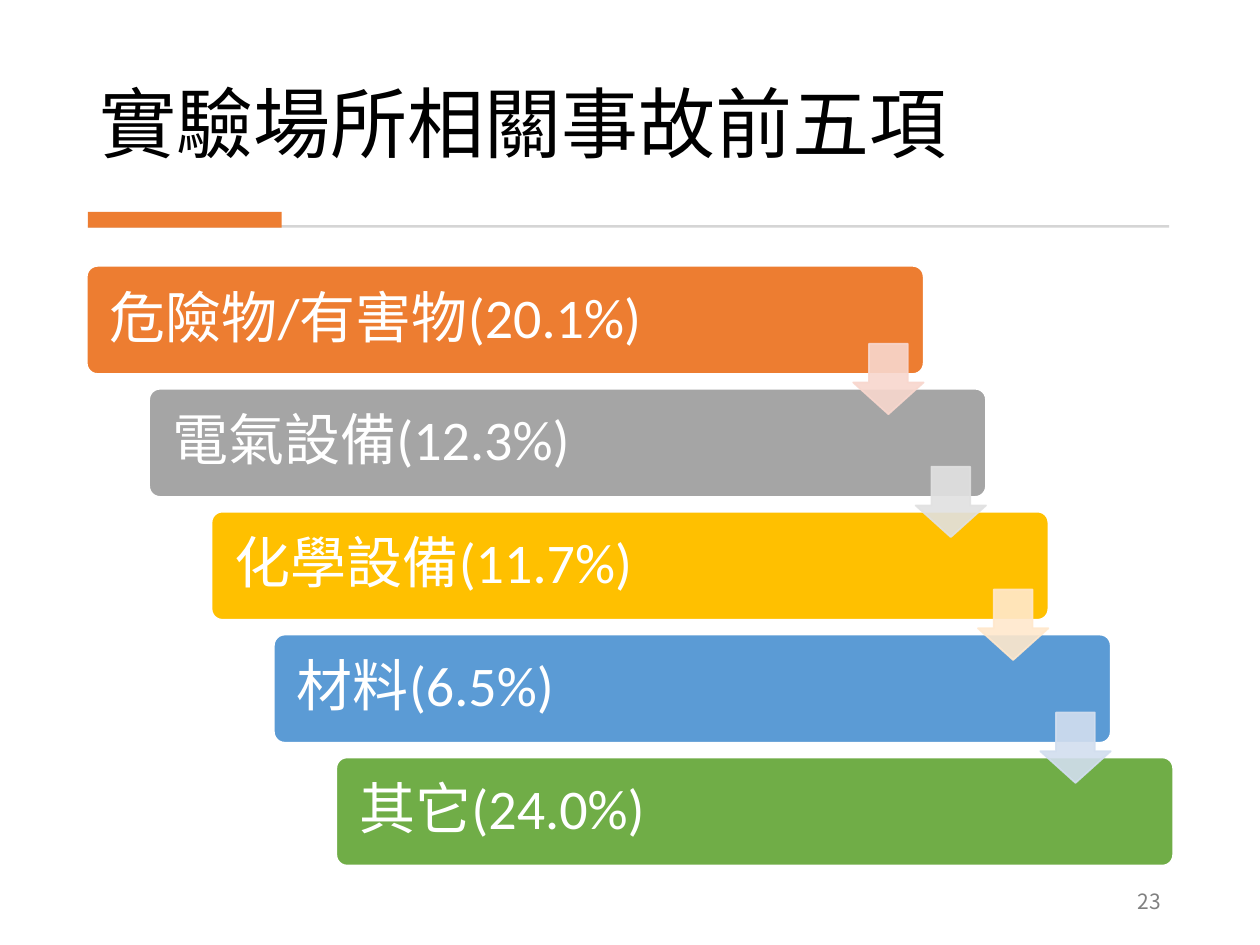
from dataclasses import dataclass

from lxml.etree import SubElement
from pptx import Presentation
from pptx.dml.color import RGBColor
from pptx.enum.shapes import MSO_SHAPE as Shape
from pptx.enum.text import MSO_ANCHOR as Anchor, MSO_AUTO_SIZE as AutoSize, PP_ALIGN as Align
from pptx.oxml.ns import qn
from pptx.util import Cm, Pt


@dataclass(frozen=True)
class Theme:
    latin: str = "Calibri"
    asian: str = "Noto Sans CJK SC"
    title_size: int = 44
    bar_size: int = 32
    number_size: int = 12
    title: str = "000000"
    accent: str = "ED7D31"
    rule: str = "D5D5D5"
    number: str = "808080"
    white: str = "FFFFFF"


THEME = Theme()

# label, bar colour, colour of the arrow to the next bar
STEPS = [
    ("危險物/有害物(20.1%)", "ED7D31", "F8D7CE"),
    ("電氣設備(12.3%)", "A5A5A5", "E1E1E1"),
    ("化學設備(11.7%)", "FFC000", "FFE8CC"),
    ("材料(6.5%)", "5B9BD5", "D2DEEF"),
    ("其它(24.0%)", "70AD47", None),
]


def add_text(paragraph, text, size, color, latin=THEME.asian):
    run = paragraph.add_run()
    run.text = text
    run.font.size = Pt(size)
    run.font.name = latin
    run.font.color.rgb = RGBColor.from_string(color)
    SubElement(run.font._element, qn("a:ea"), typeface=THEME.asian)


def add_block(slide, kind, box, fill, line=None, opacity=100):
    """Add a flat preset shape; box is left, top, width, height in cm."""
    shape = slide.shapes.add_shape(kind, *map(Cm, box))
    shape.shadow.inherit = False
    shape.fill.solid()
    shape.fill.fore_color.rgb = RGBColor.from_string(fill)
    if line:
        shape.line.color.rgb = RGBColor.from_string(line)
        shape.line.width = Pt(1)
    else:
        shape.line.fill.background()
    if opacity < 100:
        for color in shape._element.spPr.iter(qn("a:srgbClr")):
            SubElement(color, qn("a:alpha"), val=str(opacity * 1000))
    return shape


def add_title(slide, box, text):
    title = slide.shapes.title
    title.left, title.top, title.width, title.height = map(Cm, box)
    frame = title.text_frame
    frame.auto_size = AutoSize.NONE
    frame.vertical_anchor = Anchor.BOTTOM
    paragraph = frame.paragraphs[0]
    paragraph.alignment = Align.LEFT
    paragraph.line_spacing = 0.9
    add_text(paragraph, text, THEME.title_size, THEME.title)


def add_title_rule(slide, box):
    """Draw a thin rule along the bottom of the box and a short accent bar at its left."""
    left, top, width, height = box
    thin = 0.05
    add_block(slide, Shape.RECTANGLE, (left, top + height - thin, width, thin), THEME.rule)
    add_block(slide, Shape.RECTANGLE, (left, top, 3.91, height), THEME.accent)


def add_staircase(slide, box, steps):
    """Lay the bars corner to corner across the box, with an arrow at each bar's right end."""
    left, top, width, height = box
    bar_width, bar_height, arrow_size, arrow_drop = 16.87, 2.18, 1.42, 1.57
    step_x = (width - bar_width) / (len(steps) - 1)
    step_y = (height - bar_height) / (len(steps) - 1)
    corners = [(left + i * step_x, top + i * step_y) for i in range(len(steps))]

    for (x, y), (label, fill, _) in zip(corners, steps):
        bar = add_block(slide, Shape.ROUNDED_RECTANGLE, (x, y, bar_width, bar_height),
                        fill, THEME.white)
        bar.adjustments[0] = 0.1
        frame = bar.text_frame
        frame.margin_left = Cm(0.4)
        frame.vertical_anchor = Anchor.MIDDLE
        paragraph = frame.paragraphs[0]
        paragraph.alignment = Align.LEFT
        paragraph.line_spacing = 0.9
        add_text(paragraph, label, THEME.bar_size, THEME.white, THEME.latin)

    for (x, y), (_, _, tint) in zip(corners[:-1], steps):
        arrow_box = (x + bar_width - arrow_size, y + arrow_drop, arrow_size, arrow_size)
        arrow = add_block(slide, Shape.DOWN_ARROW, arrow_box, tint, tint, opacity=90)
        arrow.adjustments[0] = 0.55
        arrow.adjustments[1] = 0.45


def add_page_number(slide, box, number):
    frame = slide.shapes.add_textbox(*map(Cm, box)).text_frame
    frame.word_wrap = True
    frame.vertical_anchor = Anchor.MIDDLE
    paragraph = frame.paragraphs[0]
    paragraph.alignment = Align.RIGHT
    add_text(paragraph, number, THEME.number_size, THEME.number)


def main():
    presentation = Presentation()
    presentation.slide_width, presentation.slide_height = Cm(25.4), Cm(19.05)
    slide = presentation.slides.add_slide(presentation.slide_layouts[5])
    add_title(slide, (1.75, 0.71, 21.9, 2.82), "實驗場所相關事故前五項")
    add_title_rule(slide, (1.77, 4.27, 21.8, 0.32))
    add_page_number(slide, (18.49, 17.65, 5.16, 1.02), "23")
    add_staircase(slide, (1.75, 5.36, 21.9, 12.09), STEPS)
    presentation.save("out.pptx")


if __name__ == "__main__":
    main()
